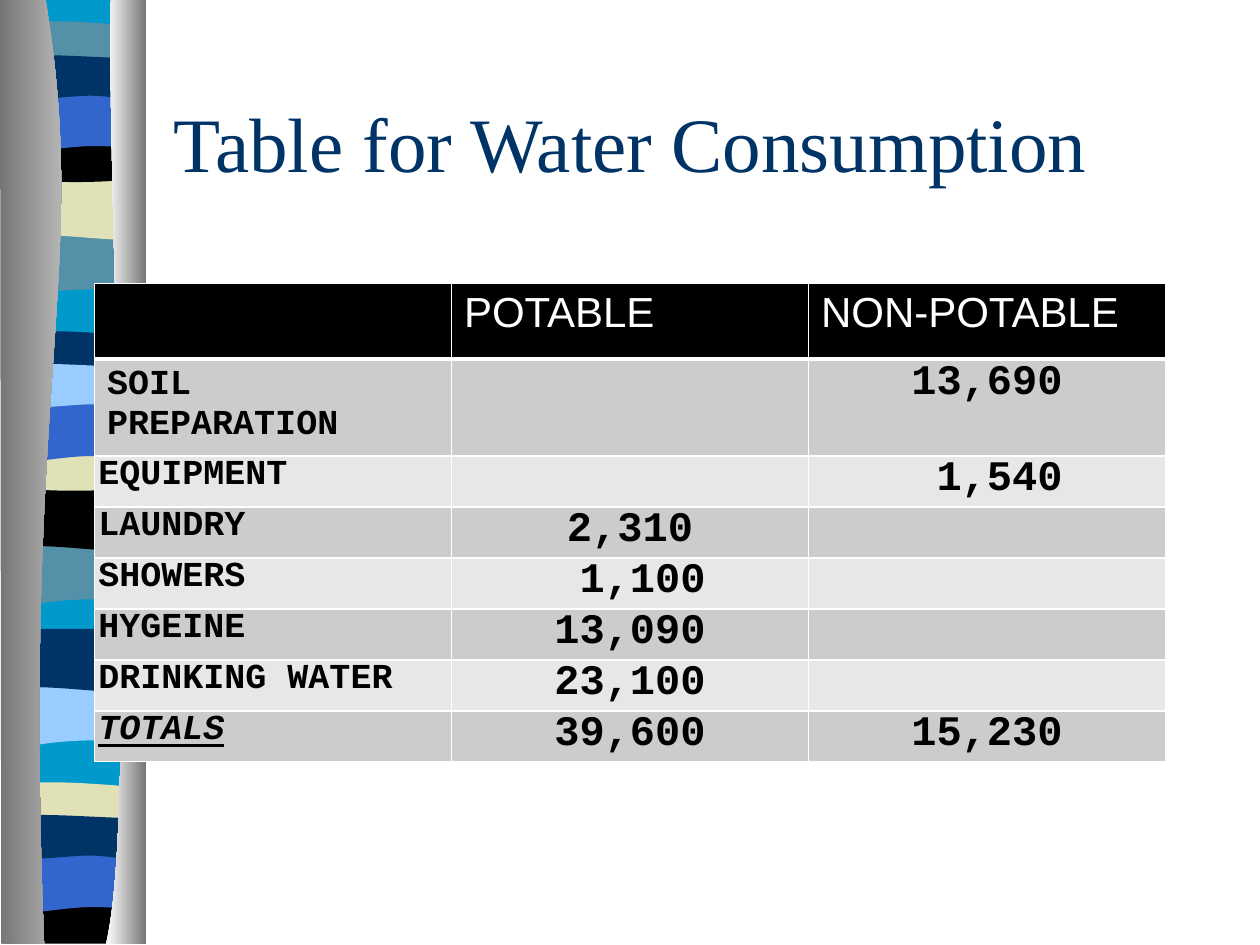
from lxml import etree
from pptx import Presentation
from pptx.dml.color import RGBColor
from pptx.enum.text import MSO_ANCHOR, PP_ALIGN
from pptx.oxml.ns import qn
from pptx.util import Inches, Pt

LEFT, CENTER = PP_ALIGN.LEFT, PP_ALIGN.CENTER
MIDDLE = MSO_ANCHOR.MIDDLE

WHITE = RGBColor(0xFF, 0xFF, 0xFF)
BLACK = RGBColor(0, 0, 0)
NAVY = RGBColor(0x00, 0x33, 0x66)
BLUE = RGBColor(0x33, 0x66, 0xCC)
SKY = RGBColor(0x99, 0xCC, 0xFF)
CYAN = RGBColor(0x00, 0x99, 0xCC)
TEAL = RGBColor(0x54, 0x90, 0xA8)
CREAM = RGBColor(0xE1, 0xE1, 0xB7)
STEEL = RGBColor(0x76, 0x76, 0x76)
SILVER = RGBColor(0xD3, 0xD3, 0xD3)
ROW_DARK = RGBColor(0xCC, 0xCC, 0xCC)
ROW_LIGHT = RGBColor(0xE7, 0xE7, 0xE7)

TITLE = "Table for Water Consumption"
HEADER = ["", "POTABLE", "NON-POTABLE"]
USES = [
    ["SOIL PREPARATION", "", "13,690"],
    ["EQUIPMENT", "", " 1,540"],
    ["LAUNDRY", "2,310", ""],
    ["SHOWERS", " 1,100", ""],
    ["HYGEINE", "13,090", ""],
    ["DRINKING WATER", "23,100", ""],
    ["TOTALS", "39,600", "15,230"],
]
ROW_HEIGHTS = [0.6, 0.72] + [0.405] * 6

# Outlines: a pair is a line end, a six-tuple a Bezier curve.
BAND = 1.08
SWELL = [(BAND, 0), (BAND, 0, BAND, 0.47, BAND, 0.47),
         (0.33, 0.39, 0.18, 0.55, 0, 0.47), (0, 0), (BAND, 0)]
RIPPLE = [(BAND, 0), (BAND, 0.48), (0.9, 0.55, 0.33, 0.42, 0, 0.48), (0, 0), (BAND, 0)]
CREST = [(BAND, 0), (BAND, 0.24), (0.9, 0.28, 0.18, 0.28, 0, 0.24), (0, 0),
         (0.07, -0.05, 0.23, -0.04, 0.41, -0.04), (0.59, -0.04, 0.94, -0.01, BAND, 0)]
SAG = [(BAND, 0), (BAND, 0.32), (0.9, 0.38, 0.18, 0.38, 0, 0.32), (0, 0),
       (0.66, 0.05, 0.85, 0, BAND, 0)]
ARCH = [(BAND, 0), (BAND, 0, BAND, 0.48, BAND, 0.48),
        (0.91, 0.42, 0.84, 0.42, 0.66, 0.42),
        (0.48, 0.42, 0.16, 0.48, 0, 0.48), (0, 0), (BAND, 0)]
ROLL = [(BAND, 0), (BAND, 0.3), (1.01, 0.36, 0.84, 0.3, 0.66, 0.3),
        (0.48, 0.3, 0.11, 0.36, 0, 0.3), (0, 0), (0.15, -0.05, 0.73, 0, 0.91, 0),
        (1.09, 0, 1.05, 0, BAND, 0)]
FOOT = [(BAND, 0), (BAND, 0.37), (0, 0.37), (0, 0), (0.66, 0.05, 0.85, 0, BAND, 0)]
BACKING = [(BAND, 0), (BAND, 7.48), (0, 7.48), (0, 0), (BAND, 0)]

BANDS = [  # left, [(outline, top, colour)]
    (0.06, [(BACKING, -0.01, CYAN), (SWELL, 1.85, TEAL), (RIPPLE, 1.4, CREAM),
            (CREST, 0.21, TEAL), (SAG, 1.08, BLACK), (ARCH, 0.74, BLUE),
            (ROLL, 0.46, NAVY)]),
    (0.05, [(SWELL, 4.31, TEAL), (RIPPLE, 3.87, BLACK), (CREST, 2.67, NAVY),
            (SAG, 3.53, CREAM), (ARCH, 3.2, BLUE), (ROLL, 2.91, SKY),
            (SWELL, 5.43, SKY), (RIPPLE, 4.99, NAVY), (CREST, 6.25, CREAM),
            (FOOT, 7.12, BLACK), (ARCH, 6.78, BLUE), (ROLL, 6.49, NAVY)]),
]
LEFT_EDGE = [(0.36, -0.01), (0.72, 2.16, 0.17, 2.96, 0.35, 7.49), (0.01, 7.49),
             (0, -0.01), (0.36, -0.01)]
RIGHT_EDGE = [(0.88, -0.01), (0.84, 1.25, 1.11, 6.46, 0.84, 7.49), (1.16, 7.49),
              (1.16, 0), (0.88, -0.01)]


def bend(shape, outline):
    """Join the line ends that stand for control points into Bezier curves."""
    lines = iter(list(shape._element.iter(qn("a:lnTo"))))
    for part in outline[1:]:
        if len(part) == 2:
            next(lines)
            continue
        curve = etree.Element(qn("a:cubicBezTo"))
        nodes = [next(lines) for _ in range(3)]
        nodes[0].addprevious(curve)
        for node in nodes:
            curve.append(node[0])
            node.getparent().remove(node)


def add_outline(slide, outline, *colours, left=0, top=0):
    """Draw an outline; two colours make a left-to-right gradient."""
    points = [(Inches(left + part[i]), Inches(top + part[i + 1]))
              for part in outline for i in range(0, len(part), 2)]
    builder = slide.shapes.build_freeform(*points[0])
    builder.add_line_segments(points[1:], close=True)
    shape = builder.convert_to_shape()
    bend(shape, outline)
    shape.shadow.inherit = False
    shape.line.fill.background()
    if len(colours) == 1:
        shape.fill.solid()
        shape.fill.fore_color.rgb = colours[0]
    else:
        shape.fill.gradient()
        shape.fill.gradient_angle = 0
        for stop, colour in zip(shape.fill.gradient_stops, colours):
            stop.color.rgb = colour


def write(frame, text, *, font, size, color, bold=False, italic=False,
          underline=False, align=LEFT):
    frame.word_wrap = True
    paragraph = frame.paragraphs[0]
    paragraph.alignment = align
    run = paragraph.add_run()
    run.text = text
    style = run.font
    style.name, style.size, style.color.rgb = font, Pt(size), color
    style.bold, style.italic, style.underline = bold, italic, underline


def set_borders(cell, bottom=1):
    properties = cell._tc.get_or_add_tcPr()
    sides = [("a:lnL", 1), ("a:lnR", 1), ("a:lnT", 1), ("a:lnB", bottom)]
    for index, (side, width) in enumerate(sides):
        line = etree.Element(qn(side), w=str(Pt(width)))
        fill = etree.SubElement(line, qn("a:solidFill"))
        etree.SubElement(fill, qn("a:srgbClr"), val=str(WHITE))
        properties.insert(index, line)


def fill_cell(cell, text, row, column):
    is_header = row == 0
    cell.fill.solid()
    cell.fill.fore_color.rgb = BLACK if is_header else (ROW_LIGHT, ROW_DARK)[row % 2]
    set_borders(cell, bottom=3 if is_header else 1)
    if text and not is_header and (row, column) != (1, 0):
        cell.margin_left = cell.margin_right = Inches(0.03)
        cell.margin_top = cell.margin_bottom = 0
    if not text:
        return
    if is_header:
        write(cell.text_frame, text, font="Arial", size=24, color=WHITE)
    elif column == 0:
        is_total = row == len(USES)
        write(cell.text_frame, text, font="Courier New", size=20, color=BLACK,
              bold=True, italic=is_total, underline=is_total)
    else:
        write(cell.text_frame, text, font="Courier New", size=24, color=BLACK,
              bold=True, align=CENTER)


def main():
    deck = Presentation()
    deck.slide_width, deck.slide_height = Inches(10), Inches(7.5)
    slide = deck.slides.add_slide(deck.slide_layouts[6])

    for left, bands in BANDS:
        for outline, top, colour in bands:
            add_outline(slide, outline, colour, left=left, top=top)
    add_outline(slide, LEFT_EDGE, STEEL, SILVER)
    add_outline(slide, RIGHT_EDGE, WHITE, STEEL)

    title = slide.shapes.add_textbox(Inches(1.28), Inches(0.5), Inches(8.5), Inches(1.25))
    title.text_frame.vertical_anchor = MIDDLE
    write(title.text_frame, TITLE, font="Times New Roman", size=44, color=NAVY)

    rows = [HEADER] + USES
    table = slide.shapes.add_table(len(rows), len(HEADER), Inches(0.75), Inches(2.25),
                                   Inches(8.5), Inches(sum(ROW_HEIGHTS))).table
    for row, (texts, height) in enumerate(zip(rows, ROW_HEIGHTS)):
        table.rows[row].height = Inches(height)
        for column, text in enumerate(texts):
            fill_cell(table.cell(row, column), text, row, column)

    deck.save("out.pptx")


if __name__ == "__main__":
    main()
